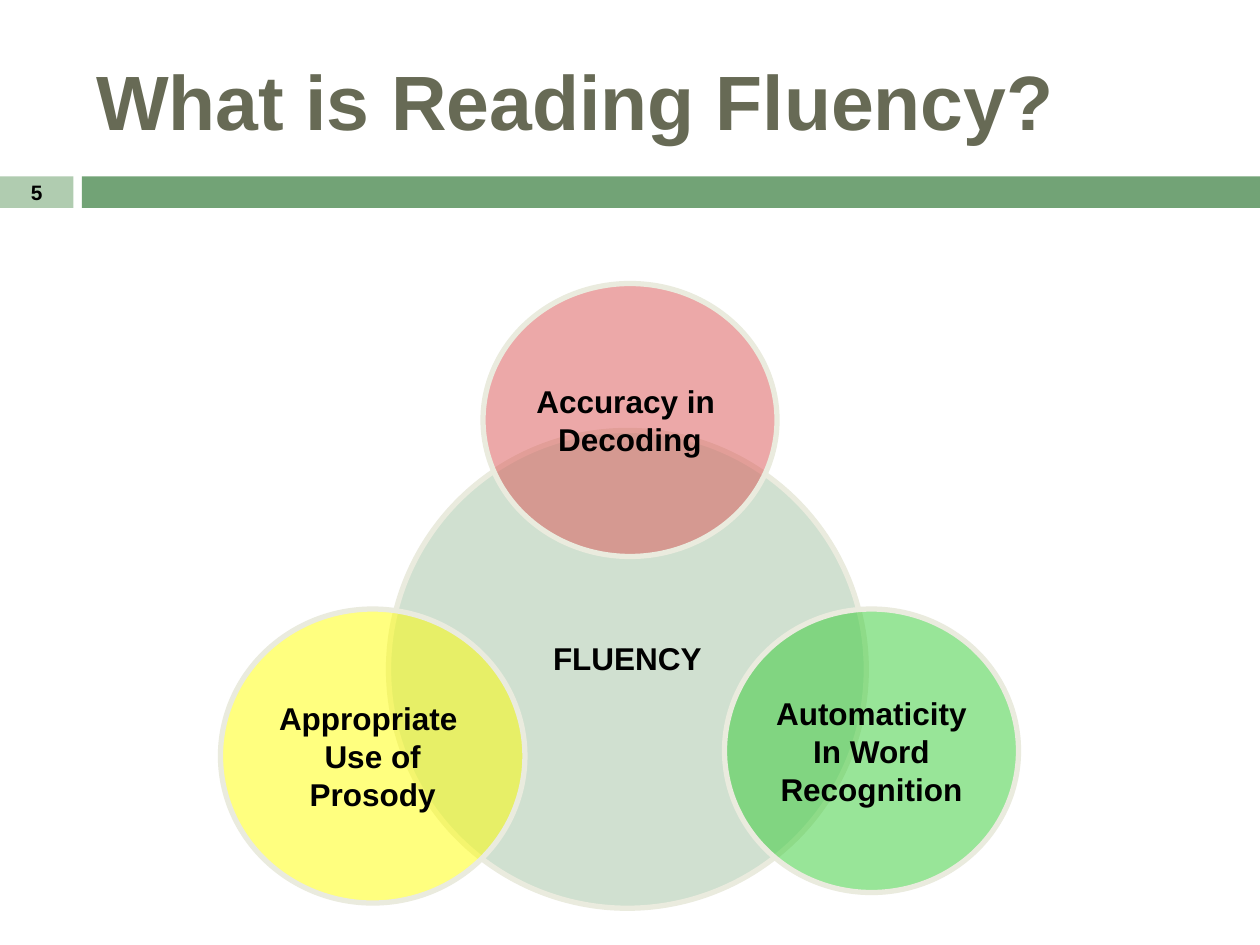
from dataclasses import dataclass

from lxml.etree import SubElement
from pptx import Presentation
from pptx.dml.color import RGBColor as RGB
from pptx.enum.shapes import MSO_SHAPE as SHAPE
from pptx.enum.text import MSO_ANCHOR as ANCHOR, PP_ALIGN as ALIGN
from pptx.oxml.ns import qn
from pptx.util import Inches, Pt


@dataclass(frozen=True)
class Theme:
    font: str = "Arial"
    title: str = "676A55"
    ink: str = "000000"
    tab: str = "B0CCB0"
    bar: str = "72A376"
    hub: str = "D0E0D0"
    accuracy: str = "DB5353"
    automaticity: str = "33CC33"
    prosody: str = "FFFF00"
    rim: str = "EAEBDE"
    rim_width: float = 3
    title_size: float = 44
    label_size: float = 18
    number_size: float = 11.9


THEME = Theme()
WIDTH, HEIGHT = Inches(10), Inches(7.5)
COLS, ROWS = 120, 90
HEADER = (0, 3, 120, 17)
DIAGRAM = (21, 27, 76, 60)


def place(box, col, row, cols, rows):
    return (round((box[0] + col) * WIDTH / COLS),
            round((box[1] + row) * HEIGHT / ROWS),
            round(cols * WIDTH / COLS), round(rows * HEIGHT / ROWS))


def write(sp, lines, size, color, align=ALIGN.CENTER, wrap=True):
    tf = sp.text_frame
    tf.word_wrap = wrap
    tf.vertical_anchor = ANCHOR.MIDDLE
    for i, line in enumerate(lines):
        p = tf.add_paragraph() if i else tf.paragraphs[0]
        p.alignment = align
        r = p.add_run()
        r.text = line
        r.font.name, r.font.size, r.font.bold = THEME.font, Pt(size), True
        r.font.color.rgb = RGB.from_string(color)


def add_filled(s, kind, at, color):
    sp = s.shapes.add_shape(kind, *at)
    sp.shadow.inherit = False
    sp.fill.solid()
    sp.fill.fore_color.rgb = RGB.from_string(color)
    sp.line.fill.background()
    return sp


def add_circle(s, at, color, lines, alpha=None):
    sp = add_filled(s, SHAPE.OVAL, at, color)
    if alpha:
        clr = sp.fill._xPr.find(qn("a:solidFill"))[0]
        SubElement(clr, qn("a:alpha"), val=str(alpha * 1000))
    sp.line.color.rgb = RGB.from_string(THEME.rim)
    sp.line.width = Pt(THEME.rim_width)
    write(sp, lines, THEME.label_size, THEME.ink, wrap=False)
    return sp


def add_header(s, box, title, number):
    tab = add_filled(s, SHAPE.RECTANGLE, place(box, 0, 13.8, 7, 3), THEME.tab)
    add_filled(s, SHAPE.RECTANGLE, place(box, 7.8, 13.8, 112.2, 3), THEME.bar)
    tab.text_frame.margin_top = tab.text_frame.margin_bottom = 0
    write(tab, [number], THEME.number_size, THEME.ink)
    sp = s.shapes.add_textbox(*place(box, 8, 0, 107, 13))
    write(sp, [title], THEME.title_size, THEME.title, ALIGN.LEFT)


def add_diagram(s, box):
    hub = add_circle(s, place(box, 16, 14, 45.5, 45.5), THEME.hub, ["FLUENCY"])
    hub.text_frame.vertical_anchor = ANCHOR.TOP
    hub.text_frame.margin_top = Inches(1.1)
    parts = [
        ((25, 0, 28, 26), THEME.accuracy, ["Accuracy in ", "Decoding"]),
        ((48, 31, 28, 27), THEME.automaticity,
         ["Automaticity", "In Word", "Recognition"]),
        ((0, 31, 29, 28), THEME.prosody,
         ["Appropriate ", "Use of", "Prosody"]),
    ]
    for cell, color, lines in parts:
        add_circle(s, place(box, *cell), color, lines, alpha=50)


def main():
    prs = Presentation()
    prs.slide_width, prs.slide_height = WIDTH, HEIGHT
    s = prs.slides.add_slide(prs.slide_layouts[6])
    add_header(s, HEADER, "What is Reading Fluency?", "5")
    add_diagram(s, DIAGRAM)
    prs.save("out.pptx")


if __name__ == "__main__":
    main()
